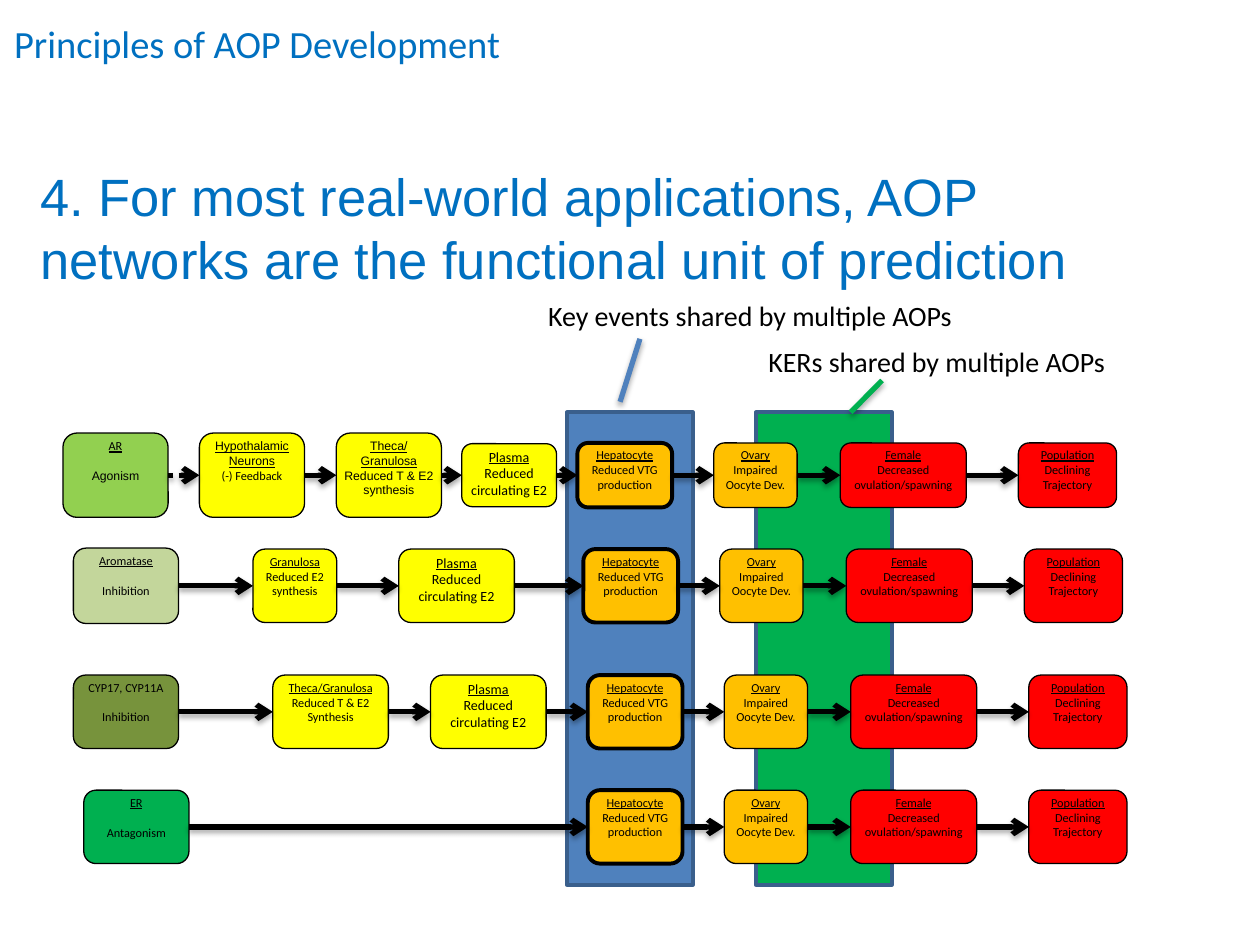
from lxml import etree
from pptx import Presentation
from pptx.dml.color import RGBColor
from pptx.enum.dml import MSO_LINE
from pptx.enum.shapes import MSO_CONNECTOR, MSO_SHAPE
from pptx.enum.text import MSO_ANCHOR, PP_ALIGN
from pptx.oxml import parse_xml
from pptx.oxml.ns import nsdecls, qn
from pptx.util import Cm, Pt

COLORS = {
    "black": "000000", "title": "0070C0", "edge": "3A5F8C", "blue": "4F81BD",
    "green": "00B050", "lime": "92D050", "sage": "C3D69B", "olive": "77933C",
    "yellow": "FFFF00", "orange": "FFC000", "red": "FF0000",
}
RGB = {name: RGBColor.from_string(value) for name, value in COLORS.items()}

SHADOW = (
    f'<a:effectLst {nsdecls("a")}>'
    '<a:outerShdw blurRad="40000" dist="23000" dir="5400000" rotWithShape="0">'
    '<a:srgbClr val="000000"><a:alpha val="35000"/></a:srgbClr>'
    '</a:outerShdw></a:effectLst>'
)

deck = Presentation()
deck.slide_width, deck.slide_height = Cm(25.4), Cm(19.05)
page = deck.slides.add_slide(deck.slide_layouts[6])


def add_box(preset, left, top, width, height, fill, edge, weight):
    box = page.shapes.add_shape(preset, Cm(left), Cm(top), Cm(width), Cm(height))
    box.shadow.inherit = False
    box.fill.solid()
    box.fill.fore_color.rgb = RGB[fill]
    box.line.color.rgb = RGB[edge]
    box.line.width = Pt(weight)
    return box


def add_line(x1, y1, x2, y2, color):
    """Draw a thick straight line with a soft shadow below it."""
    line = page.shapes.add_connector(
        MSO_CONNECTOR.STRAIGHT, Cm(x1), Cm(y1), Cm(x2), Cm(y2))
    line.line.color.rgb = RGB[color]
    line.line.width = Pt(3)
    line._element.spPr.append(parse_xml(SHADOW))
    return line


# Titles and callout labels: text, left, top, width, height, size, font, colour, alignment
labels = [
    ("Principles of AOP Development",
     -0.53, 0.28, 11.43, 1.19, 22, "Calibri", "title", PP_ALIGN.CENTER),
    ("4. For most real-world applications, AOP networks are the functional unit of prediction",
     0.56, 3.18, 21.34, 2.74, 30, "Arial", "title", PP_ALIGN.LEFT),
    ("Key events shared by multiple AOPs",
     10.8, 5.89, 13.97, 0.94, 16, "Calibri", "black", PP_ALIGN.LEFT),
    ("KERs shared by multiple AOPs",
     15.24, 6.83, 10.16, 0.94, 16, "Calibri", "black", PP_ALIGN.LEFT),
]
for text, left, top, width, height, size, font, color, align in labels:
    label = page.shapes.add_textbox(Cm(left), Cm(top), Cm(width), Cm(height))
    label.text_frame.word_wrap = True
    label.text_frame.text = text
    para = label.text_frame.paragraphs[0]
    para.alignment = align
    span = para.runs[0]
    span.font.size = Pt(size)
    span.font.name = font
    span.font.color.rgb = RGB[color]

# Bands behind the shared events and relationships, with their callout lines
add_box(MSO_SHAPE.RECTANGLE, 15.24, 8.31, 2.74, 9.53, "green", "edge", 2)
add_box(MSO_SHAPE.RECTANGLE, 11.43, 8.31, 2.54, 9.53, "blue", "edge", 2)
add_line(12.9, 6.83, 12.5, 8.1, "blue")
add_line(17.15, 8.31, 17.78, 7.67, "green")

# Events that every pathway ends with: text, offset, width, fill, outline weight
shared_events = [
    ("Hepatocyte\nReduced VTG production", 0, 1.91, "orange", 2.25),
    ("Ovary\nImpaired Oocyte Dev.", 2.75, 1.68, "orange", 0.75),
    ("Female\nDecreased ovulation/spawning", 5.3, 2.54, "red", 0.75),
    ("Population\nDeclining Trajectory", 8.89, 1.98, "red", 0.75),
]
plasma = "Plasma\nReduced circulating E2"

# Pathways: middle, start and height of the shared events, then the events before
# them as text, left, width, height, fill, heading font, body font
pathways = [
    (9.58, 11.64, 1.3, [
        ("AR\nAgonism", 1.27, 2.12, 1.7, "lime", "Calibri", "Arial"),
        ("Hypothalamic Neurons\n(-) Feedback", 4.02, 2.12, 1.7, "yellow", "Arial", "Calibri"),
        ("Theca/\nGranulosa\nReduced T & E2 synthesis",
         6.78, 2.12, 1.7, "yellow", "Arial", "Arial"),
        (plasma, 9.31, 1.91, 1.27, "yellow", "Calibri", "Calibri")]),
    (11.81, 11.76, 1.48, [
        ("Aromatase\nInhibition", 1.48, 2.12, 1.52, "sage", "Calibri", "Calibri"),
        ("Granulosa\nReduced E2 synthesis", 5.1, 1.69, 1.48, "yellow", "Calibri", "Calibri"),
        (plasma, 8.04, 2.33, 1.48, "yellow", "Calibri", "Calibri")]),
    (14.35, 11.85, 1.48, [
        ("CYP17, CYP11A\nInhibition", 1.48, 2.12, 1.48, "olive", "Calibri", "Calibri"),
        ("Theca/Granulosa\nReduced T & E2 Synthesis",
         5.5, 2.33, 1.48, "yellow", "Calibri", "Calibri"),
        (plasma, 8.68, 2.33, 1.48, "yellow", "Calibri", "Calibri")]),
    (16.67, 11.85, 1.48, [
        ("ER\nAntagonism", 1.69, 2.12, 1.48, "green", "Calibri", "Calibri")]),
]

for middle, start, shared_height, first_events in pathways:
    events = [event + (0.75,) for event in first_events]
    events += [(text, start + offset, width, shared_height, fill, "Calibri", "Calibri", weight)
               for text, offset, width, fill, weight in shared_events]
    previous = None
    for text, left, width, height, fill, head_font, body_font, weight in events:
        event = add_box(MSO_SHAPE.ROUNDED_RECTANGLE, left, middle - height / 2,
                        width, height, fill, "black", weight)
        frame = event.text_frame
        frame.word_wrap = True
        frame.vertical_anchor = MSO_ANCHOR.TOP
        frame.margin_left = frame.margin_right = Cm(0.05)
        frame.margin_top = frame.margin_bottom = Cm(0.03)
        frame.text = text
        body = len(frame.paragraphs) - 1
        for index, para in enumerate(frame.paragraphs):
            para.alignment = PP_ALIGN.CENTER
            if previous is None and index == body:
                para.space_before = Pt(8.5)
            span = para.runs[0]
            span.font.size = Pt(8 if text == plasma else 7)
            span.font.name = body_font if index == body else head_font
            span.font.color.rgb = RGB["black"]
            span.font.underline = index < body and not text.startswith("CYP17")

        if previous is not None:
            arrow = add_line(0, middle, left, middle, "black")
            arrow.begin_connect(previous, 3)
            arrow.end_connect(event, 1)
            if text.startswith("Hypothalamic"):
                arrow.line.dash_style = MSO_LINE.ROUND_DOT
            etree.SubElement(arrow.line._get_or_add_ln(), qn("a:tailEnd"), type="arrow")
        previous = event

deck.save("out.pptx")
